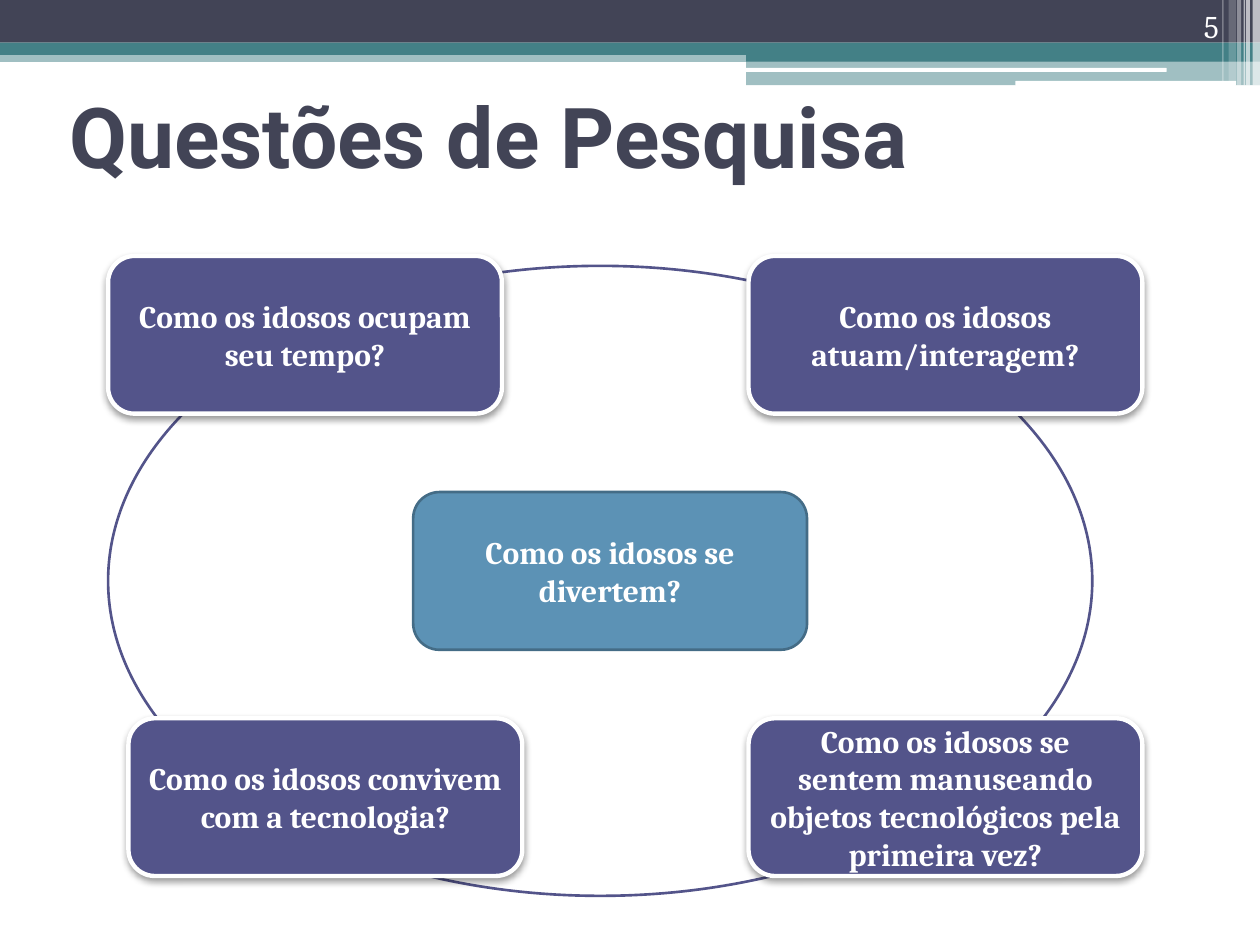
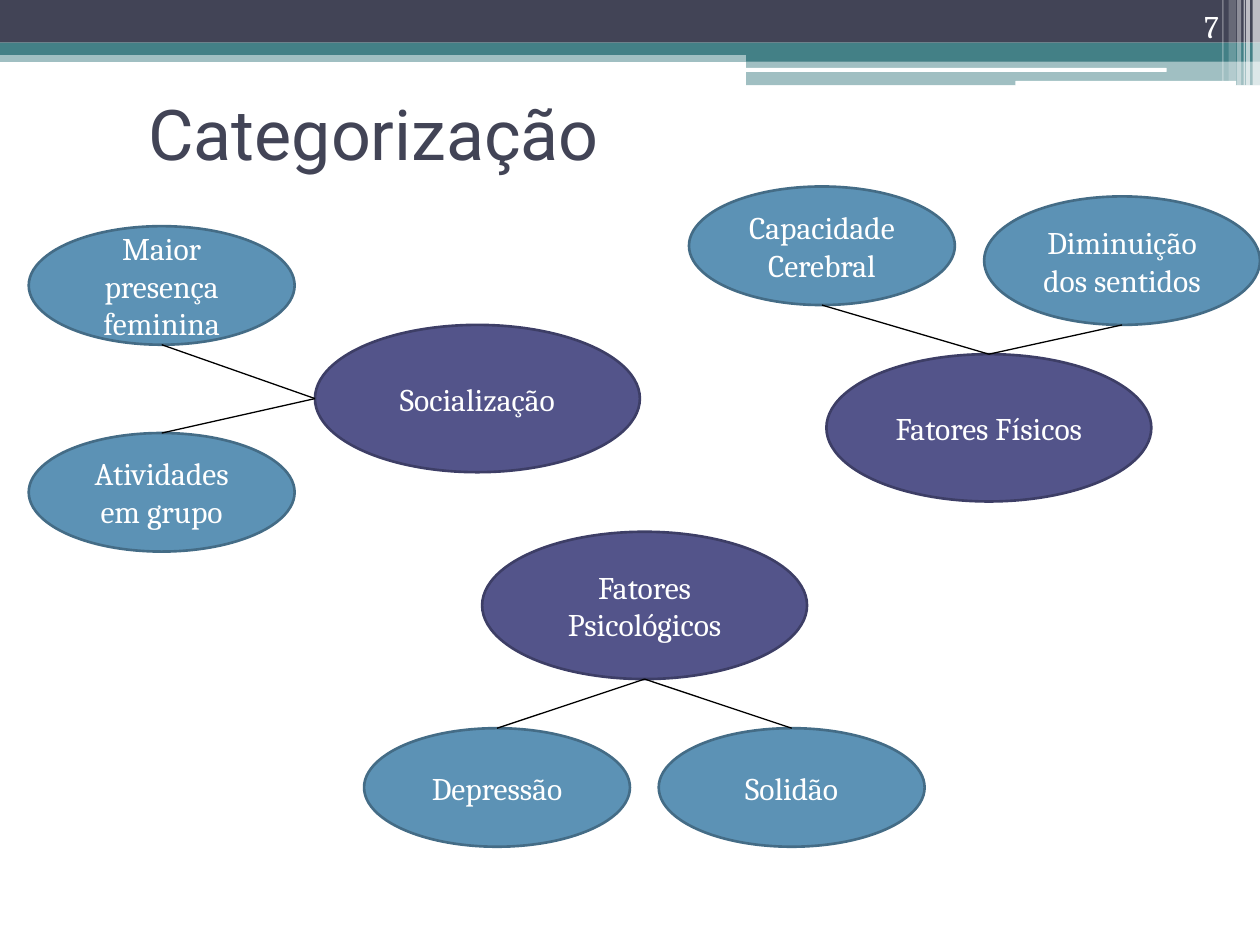
from lxml.etree import SubElement
from pptx import Presentation
from pptx.dml.color import RGBColor
from pptx.enum.shapes import MSO_CONNECTOR, MSO_SHAPE
from pptx.enum.text import MSO_ANCHOR, PP_ALIGN
from pptx.oxml.ns import qn
from pptx.util import Cm, Pt

DARK, TEAL, PURPLE, BLUE = "424456", "438086", "53548A", "5C92B5"
PURPLE_EDGE, BLUE_EDGE, WHITE, BLACK = "3D3E66", "446C86", "FFFFFF", "000000"
BODY_FONT, TITLE_FONT = "Cambria", "Roboto"
WIDTH, HEIGHT = 25.4, 19.05
TAB_LEFT, TAB_WIDTH = 15.04, 10.36

# left, top, width, height, colour, opacity in percent
BANDS = [
    (0, 1.02, WIDTH, 0.23, TEAL, 50),
    (0, 0, WIDTH, 0.86, DARK, 100),
    (0, 0.86, WIDTH, 0.25, TEAL, 100),
    (TAB_LEFT, 0.99, TAB_WIDTH, 0.25, TEAL, 100),
    (TAB_LEFT, 1.23, TAB_WIDTH, 0.49, TEAL, 50),
]
RULES = [(15.01, 1.37, 8.51, 0.08), (20.47, 1.63, 4.45, 0.1)]
# left, width, height, opacity in percent
STRIPES = [
    (25.25, 0.15, 1.73, 65),
    (25.12, 0.08, 1.73, 65),
    (25.07, 0.03, 1.73, 60),
    (24.94, 0.08, 1.73, 40),
    (24.77, 0.15, 1.63, 20),
    (24.64, 0.03, 1.63, 30),
]

CARD_SIZE = (7.94, 3.18)
QUESTIONS = [
    (2.18, 5.16, "Como os idosos ocupam seu tempo?"),
    (15.09, 5.16, "Como os idosos atuam/interagem?"),
    (2.59, 14.48, "Como os idosos convivem com a tecnologia?"),
    (15.09, 14.48, "Como os idosos se sentem manuseando objetos "
                   "tecnológicos pela primeira vez?"),
]

CATEGORY_SIZE, FACTOR_SIZE = (6.55, 2.97), (5.36, 2.39)
# category, its place, its joining side, then factors: text, place, size, joining side
CATEGORIES = [
    ("Socialização", (6.35, 6.55), "left", [
        ("Maior presença feminina", (0.58, 4.56), FACTOR_SIZE, "bottom"),
        ("Atividades em grupo", (0.58, 8.73), FACTOR_SIZE, "top")]),
    ("Fatores Físicos", (16.66, 7.14), "top", [
        ("Capacidade Cerebral", (13.89, 3.76), FACTOR_SIZE, "bottom"),
        ("Diminuição dos sentidos", (19.84, 3.96), (5.56, 2.59), "bottom")]),
    ("Fatores Psicológicos", (9.72, 10.72), "bottom", [
        ("Depressão", (7.34, 14.68), FACTOR_SIZE, "top"),
        ("Solidão", (13.28, 14.68), FACTOR_SIZE, "top")]),
]


def color(hex_string):
    return RGBColor.from_string(hex_string)


def set_all(target, values):
    for name, value in values.items():
        setattr(target, name, value)


def edge_point(shape, side):
    """Return the middle of one side of a shape."""
    across, down = {"left": (0, 0.5), "top": (0.5, 0), "bottom": (0.5, 1)}[side]
    return (shape.left + int(shape.width * across),
            shape.top + int(shape.height * down))


class SlideBuilder:
    """Holds the deck, its style and the page being drawn."""

    def __init__(self):
        self.deck = Presentation()
        set_all(self.deck, {"slide_width": Cm(WIDTH), "slide_height": Cm(HEIGHT)})
        self.page = None

    def add_page(self, number):
        self.page = self.deck.slides.add_slide(self.deck.slide_layouts[6])
        for *place, fill, opacity in BANDS:
            self.shape(MSO_SHAPE.RECTANGLE, place, fill, opacity=opacity)
        for place in RULES:
            self.shape(MSO_SHAPE.ROUNDED_RECTANGLE, place, WHITE)
        for left, width, height, opacity in STRIPES:
            self.shape(MSO_SHAPE.RECTANGLE, (left, 0, width, height), WHITE,
                       opacity=opacity)
        self.text_box((22.71, 0, 2.11, 1.02), number, MSO_ANCHOR.BOTTOM,
                      align=PP_ALIGN.RIGHT)

    def shape(self, kind, place, fill=None, line=None, weight=1.5, opacity=100):
        shape = self.page.shapes.add_shape(kind, *map(Cm, place))
        shape.shadow.inherit = False
        if fill:
            shape.fill.solid()
            shape.fill.fore_color.rgb = color(fill)
            if opacity < 100:
                tint = shape.element.spPr.find(".//" + qn("a:srgbClr"))
                SubElement(tint, qn("a:alpha"), val=str(opacity * 1000))
        else:
            shape.fill.background()
        if line:
            shape.line.color.rgb = color(line)
            shape.line.width = Pt(weight)
        else:
            shape.line.fill.background()
        return shape

    def drop_shadow(self, shape):
        effects = shape.element.spPr.find(qn("a:effectLst"))
        shadow = SubElement(effects, qn("a:outerShdw"), blurRad=str(Pt(4.1)),
                            dist=str(Pt(2)), dir="5400000", rotWithShape="0")
        tint = SubElement(shadow, qn("a:srgbClr"), val=BLACK)
        SubElement(tint, qn("a:alpha"), val="40000")

    def label(self, box, text, anchor=MSO_ANCHOR.MIDDLE, align=PP_ALIGN.CENTER,
              size=18, font=BODY_FONT, tone=WHITE, bold=False):
        frame = box.text_frame
        set_all(frame, {"word_wrap": True, "vertical_anchor": anchor})
        paragraph = frame.paragraphs[0]
        paragraph.alignment = align
        span = paragraph.add_run()
        span.text = text
        set_all(span.font, {"name": font, "size": Pt(size), "bold": bold})
        span.font.color.rgb = color(tone)

    def text_box(self, place, text, anchor, **style):
        box = self.page.shapes.add_textbox(*map(Cm, place))
        self.label(box, text, anchor, **style)
        return box

    def title(self, place, text, anchor, size, bold=False):
        return self.text_box(place, text, anchor, align=PP_ALIGN.LEFT, size=size,
                             font=TITLE_FONT, tone=DARK, bold=bold)

    def card(self, place, text, fill, line, weight):
        card = self.shape(MSO_SHAPE.ROUNDED_RECTANGLE, place, fill, line, weight)
        self.label(card, text, bold=True)
        return card

    def bubble(self, place, text, fill, line):
        bubble = self.shape(MSO_SHAPE.OVAL, place, fill, line)
        self.label(bubble, text)
        return bubble

    def connect(self, start, end):
        line = self.page.shapes.add_connector(MSO_CONNECTOR.STRAIGHT, *start, *end)
        line.line.color.rgb = color(BLACK)
        line.line.width = Pt(0.75)
        SubElement(line.element.spPr, qn("a:effectLst"))


def add_questions(builder):
    builder.add_page("5")
    builder.shape(MSO_SHAPE.OVAL, (2.18, 5.36, 19.84, 12.7), line=PURPLE)
    for left, top, text in QUESTIONS:
        card = builder.card((left, top, *CARD_SIZE), text, PURPLE, WHITE, 2.5)
        builder.drop_shadow(card)
    builder.card((8.33, 9.92, *CARD_SIZE), "Como os idosos se divertem?",
                 BLUE, BLUE_EDGE, 1.5)
    title = builder.title((0.99, 0.79, 21.59, 3.07), "Questões de Pesquisa",
                          MSO_ANCHOR.BOTTOM, 48, bold=True)
    title.text_frame.margin_left = Cm(0.41)


def add_categories(builder):
    builder.add_page("7")
    builder.title((2.74, 1.19, 22.6, 2.97), "Categorização", MSO_ANCHOR.MIDDLE, 40)
    for name, corner, joint, factors in CATEGORIES:
        category = builder.bubble((*corner, *CATEGORY_SIZE), name,
                                  PURPLE, PURPLE_EDGE)
        for text, place, size, side in factors:
            factor = builder.bubble((*place, *size), text, BLUE, BLUE_EDGE)
            builder.connect(edge_point(factor, side), edge_point(category, joint))


def main():
    builder = SlideBuilder()
    add_questions(builder)
    add_categories(builder)
    builder.deck.save("out.pptx")


if __name__ == "__main__":
    main()
